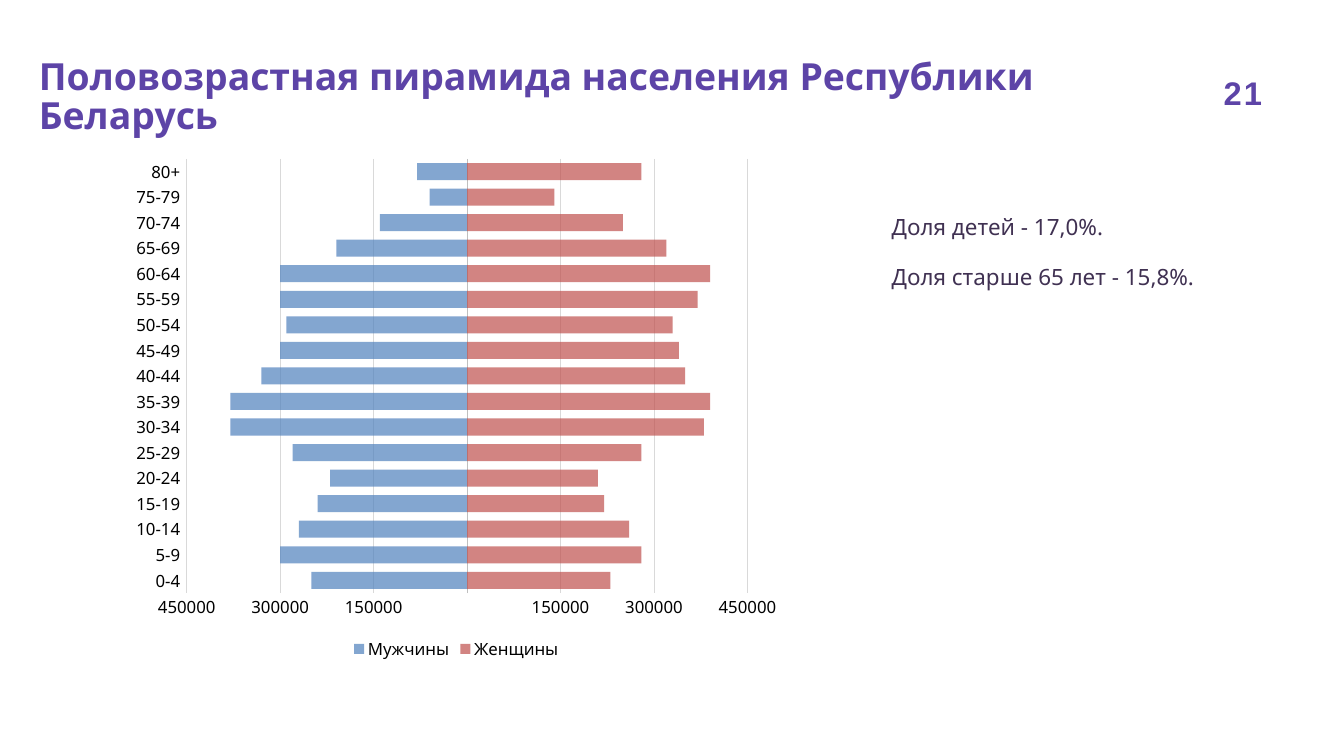
"""Build a slide with the age and sex pyramid of the population of Belarus."""
from lxml.etree import SubElement
from pptx import Presentation
from pptx.chart.data import CategoryChartData
from pptx.dml.color import RGBColor
from pptx.enum.chart import (XL_CHART_TYPE as ChartType, XL_LEGEND_POSITION as LegendPos,
                             XL_TICK_LABEL_POSITION as LabelPos, XL_TICK_MARK as TickMark)
from pptx.oxml.ns import qn
from pptx.util import Inches, Pt


def color(value):
    return RGBColor.from_string(value)


def add_text(place, lines, size, fill, font="Noto Sans", bold=False, inset=(0, 0),
             gap=0, line_spacing=None, tracking=0):
    box = slide.shapes.add_textbox(*map(Inches, place))
    frame = box.text_frame
    frame.word_wrap = True
    frame.margin_left = frame.margin_right = Inches(inset[0])
    frame.margin_top = frame.margin_bottom = Inches(inset[1])
    for index, line in enumerate(lines):
        paragraph = frame.add_paragraph() if index else frame.paragraphs[0]
        if index:
            paragraph.space_before = Pt(gap)
        if line_spacing:
            paragraph.line_spacing = line_spacing
        run = paragraph.add_run()
        run.text = line
        run.font.name, run.font.size, run.font.bold = font, Pt(size), bold
        run.font.color.rgb = color(fill)
        if tracking:
            run._r.get_or_add_rPr().set("spc", str(int(tracking * 100)))


prs = Presentation()
prs.slide_width, prs.slide_height = Inches(20), Inches(11.25)
slide = prs.slides.add_slide(prs.slide_layouts[6])

add_text((0.58, 0.88, 17, 1.31), ["Половозрастная пирамида населения Республики Беларусь"],
         40, "5D44A7", bold=True, line_spacing=0.87)

ages = [f"{start}-{start + 4}" for start in range(0, 80, 5)] + ["80+"]
men = [250, 300, 270, 240, 220, 280, 380, 380, 330, 300, 290, 300, 300, 210, 140, 60, 80]
women = [230, 280, 260, 220, 210, 280, 380, 390, 350, 340, 330, 370, 390, 320, 250, 140, 280]

population = CategoryChartData(number_format="#;#")
population.categories = ages
population.add_series("Мужчины", [-thousands * 1000 for thousands in men])
population.add_series("Женщины", [thousands * 1000 for thousands in women])
pyramid = slide.shapes.add_chart(ChartType.BAR_STACKED, Inches(1.83), Inches(2.21),
                                 Inches(9.92), Inches(7.67), population).chart
pyramid.has_title = False
pyramid.font.name, pyramid.font.size = "Noto Sans", Pt(18)
pyramid.font.color.rgb = color("000000")
pyramid.has_legend = True
pyramid.legend.position = LegendPos.BOTTOM
pyramid.legend.include_in_layout = False

bars = pyramid.plots[0]
bars.gap_width, bars.overlap = 50, 100
bars.vary_by_categories = False
for sex, fill in zip(bars.series, ("4F81BD", "C0504D")):
    sex.invert_if_negative = False
    sex.format.fill.solid()
    sex.format.fill.fore_color.rgb = color(fill)
    for tint in sex.format.fill._xPr.iter(qn("a:srgbClr")):
        SubElement(tint, qn("a:alpha"), val="70000")

age_axis, people_axis = pyramid.category_axis, pyramid.value_axis
for axis in (age_axis, people_axis):
    axis.major_tick_mark = axis.minor_tick_mark = TickMark.NONE
age_axis.tick_label_position = LabelPos.LOW
people_axis.major_unit = 150000
people_axis.minimum_scale, people_axis.maximum_scale = -450000, 450000
people_axis.tick_labels.number_format = "#;#"
people_axis.tick_labels.number_format_is_linked = False
people_axis.format.line.fill.background()
for line, stroke in ((age_axis.format.line, "BFBFBF"),
                     (people_axis.major_gridlines.format.line, "D9D9D9")):
    line.color.rgb = color(stroke)
    line.width = Pt(0.75)

add_text((18.21, 1.07, 0.67, 0.61), ["21"], 35, "5D44A7", font="Arial", bold=True,
         inset=(0, 0.02), tracking=2.2)
add_text((13.17, 3.12, 4.75, 1.31), ["Доля детей - 17,0%.", "Доля старше 65 лет - 15,8%."],
         24, "403152", inset=(0.1, 0.05), gap=25)

prs.save("out.pptx")
